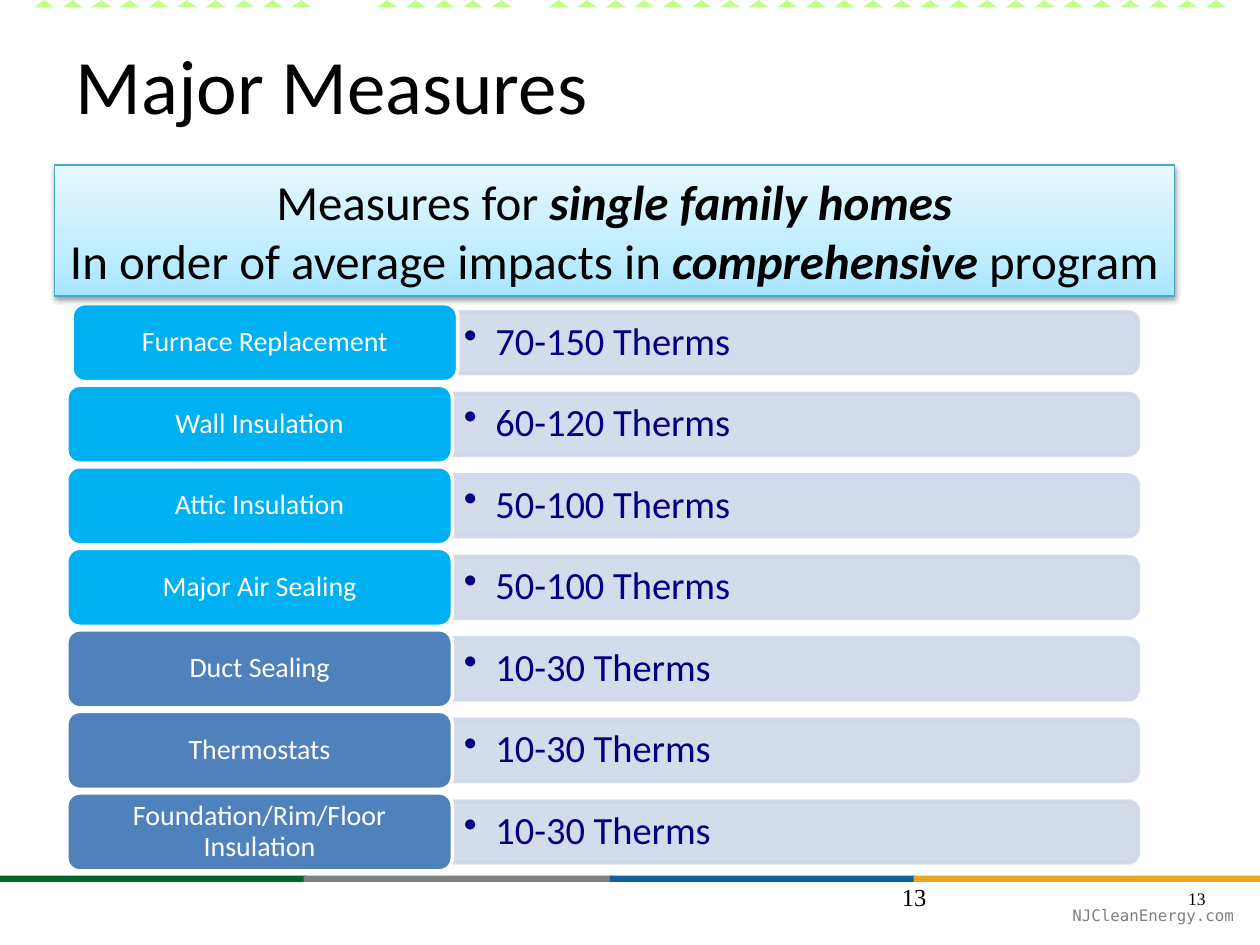
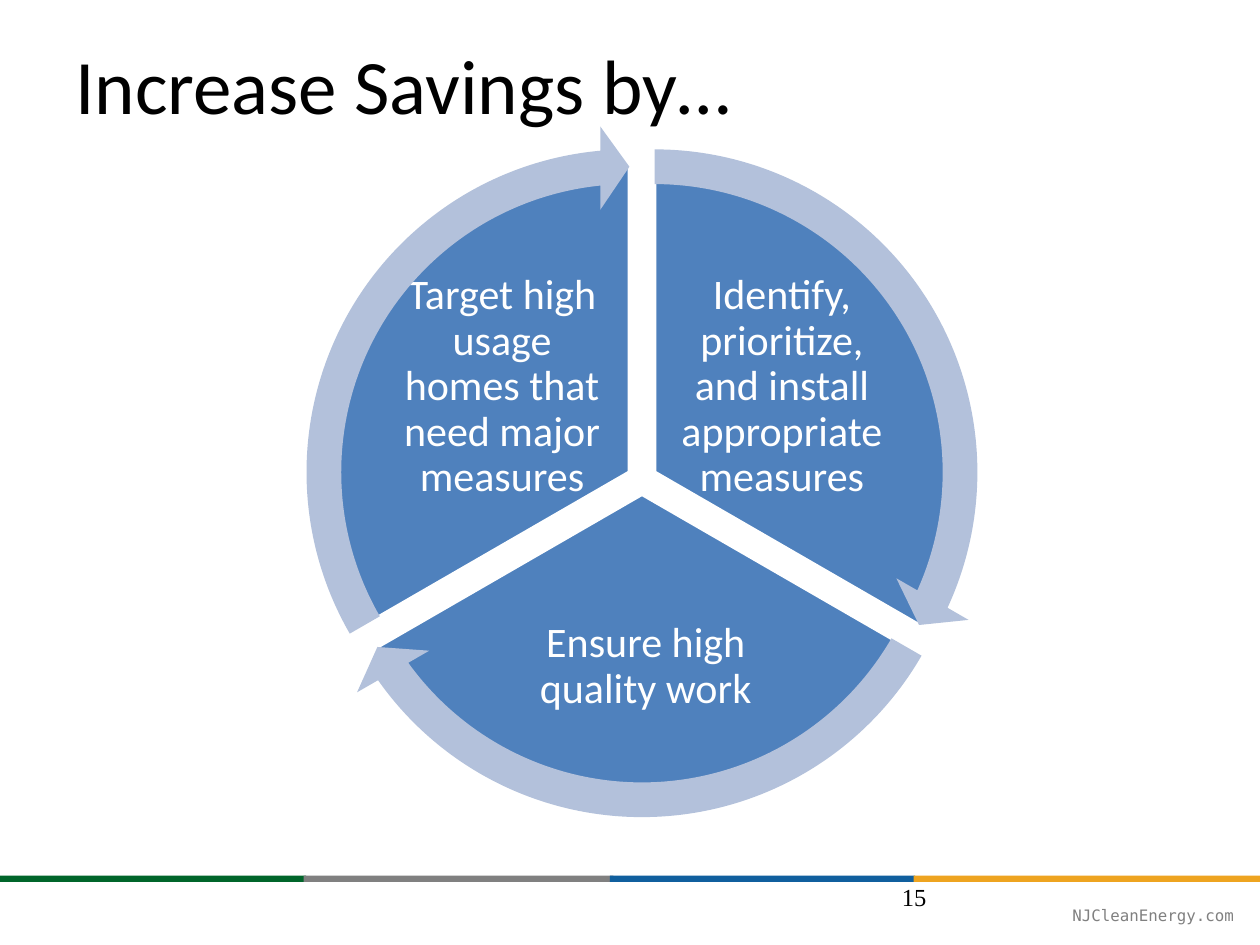
from lxml.etree import SubElement
from pptx import Presentation
from pptx.dml.color import RGBColor
from pptx.enum.shapes import MSO_SHAPE as SHAPE
from pptx.enum.text import MSO_ANCHOR as ANCHOR, PP_ALIGN as ALIGN
from pptx.oxml import parse_xml
from pptx.oxml.ns import nsdecls, qn
from pptx.util import Pt

BLACK, WHITE, GREY, NAVY = "000000", "FFFFFF", "808080", "000081"
SKY, BLUE, PALE, ARROW, TOOTH = "00B0F0", "4F81BD", "D0D8E8", "B3C1DB", "BFFF8C"
BAND = [(0, 175, "00652A"), (173.5, 177, GREY), (348.5, 174.5, "105F9E"), (522, 198, "EEA420")]
BANNER_STOPS = [(0, "A7E6FF"), (35, "C1EDFF"), (100, "E7F8FF")]

TITLE = dict(size=44, name="Calibri", color=BLACK)
BANNER = dict(size=28, name="Calibri", color=BLACK)
LABEL = dict(size=16, name="Calibri", color=WHITE)
VALUE = dict(size=22, name="Calibri", color=NAVY)
WEDGE = dict(size=24, name="Calibri", color=WHITE)
FOOTER = dict(size=9, name="DejaVu Sans Mono", color=GREY)
NUMBER = dict(size=14, name="Times New Roman", color=BLACK)
SMALL_NUMBER = dict(NUMBER, size=10)

MEASURES = [
    ("Furnace Replacement", "70-150 Therms", SKY),
    ("Wall Insulation", "60-120 Therms", SKY),
    ("Attic Insulation", "50-100 Therms", SKY),
    ("Major Air Sealing", "50-100 Therms", SKY),
    ("Duct Sealing", "10-30 Therms", BLUE),
    ("Thermostats", "10-30 Therms", BLUE),
    ("Foundation/Rim/Floor Insulation", "10-30 Therms", BLUE),
]
STEPS = [
    ("Identify, prioritize, and install appropriate measures", 270, (14.4, 0), (222.5, 97.2, 126, 105)),
    ("Ensure high quality work", 30, (7.2, 12.6), (113, 263.5, 189.4, 92.2)),
    ("Target high usage homes that need major measures", 150, (0, 0), (62.6, 97.2, 126, 105)),
]


def rgb(value):
    """Turn a hex string into a colour."""
    return RGBColor.from_string(value)


def set_font(font, fmt):
    """Apply a dict of format values to a font."""
    for key, value in fmt.items():
        if key == "color":
            font.color.rgb = rgb(value)
        else:
            setattr(font, key, Pt(value) if key == "size" else value)


def add_runs(p, runs, fmt):
    """Add (text, format changes) runs to a paragraph."""
    for text, changes in runs:
        r = p.add_run()
        r.text = text
        set_font(r.font, {**fmt, **changes})


def set_frame(tf, inset=(7.2, 3.6), anchor=ANCHOR.TOP):
    """Set wrapping, insets and anchor of a text frame."""
    across, down = (Pt(v) for v in inset)
    values = dict(word_wrap=True, vertical_anchor=anchor, margin_left=across,
                  margin_right=across, margin_top=down, margin_bottom=down)
    for key, value in values.items():
        setattr(tf, key, value)


def write(sp, text, fmt, align=ALIGN.LEFT, spacing=None, **frame):
    """Write one paragraph into a shape and return it."""
    set_frame(sp.text_frame, **frame)
    p = sp.text_frame.paragraphs[0]
    p.alignment, p.line_spacing = align, spacing
    add_runs(p, [(text, {})], fmt)
    return p


def add_text(slide, box, text, fmt, **options):
    """Add a text box with one paragraph."""
    return write(slide.shapes.add_textbox(*map(Pt, box)), text, fmt, **options)


def add_box(slide, kind, box, fill, line=None, width=2, adjust=()):
    """Add a flat preset shape."""
    sp = slide.shapes.add_shape(kind, *map(Pt, box))
    sp.shadow.inherit = False
    sp.fill.solid()
    sp.fill.fore_color.rgb = rgb(fill)
    if line:
        sp.line.color.rgb = rgb(line)
        sp.line.width = Pt(width)
    else:
        sp.line.fill.background()
    for i, value in enumerate(adjust):
        sp.adjustments[i] = value
    return sp


def add_bullet(p, indent):
    """Give a paragraph a hanging round bullet."""
    p.level = 1
    pPr = p._p.get_or_add_pPr()
    pPr.set("marL", str(Pt(indent)))
    pPr.set("indent", str(-Pt(indent)))
    SubElement(pPr, qn("a:buChar"), char="•")


def add_base(prs, title, number):
    """Add a slide with its title, colour band, footer and number."""
    slide = prs.slides.add_slide(prs.slide_layouts[5])
    sp = slide.shapes.title
    sp.left, sp.top, sp.width, sp.height = map(Pt, (36, 18, 620.6, 104.4))
    write(sp, title, TITLE)
    for x, w, fill in BAND:
        add_box(slide, SHAPE.RECTANGLE, (x, 500.4, w, 3.6), fill)
    add_text(slide, (0, 515.5, 704.9, 12.2), "NJCleanEnergy.com", FOOTER,
             align=ALIGN.RIGHT, spacing=1.2, inset=(0, 0))
    add_text(slide, (508.3, 500.4, 162, 28.8), number, NUMBER)
    return slide


def add_teeth(slide, box, count, gaps):
    """Draw a row of small triangles, leaving out the gaps."""
    x, y, w, h = box
    tooth = 11.6
    pitch = (w - tooth) / (count - 1)
    for i in range(count):
        if i not in gaps:
            add_box(slide, SHAPE.ISOSCELES_TRIANGLE, (x + i * pitch, y, tooth, h), TOOTH)


def add_measures(slide, box):
    """Draw one row per measure: a label over a rounded bar with its value."""
    x, y, w, h = box
    label_w, label_h, bar_h = 220.3, 44.6, 35.3
    pitch = (h - label_h) / (len(MEASURES) - 1)
    bar_x, bar_w = x + label_w, w - label_w
    for i, (name, therms, fill) in enumerate(MEASURES):
        top = y + i * pitch
        middle = top + label_h / 2
        bar = add_box(slide, SHAPE.ROUND_2_SAME_RECTANGLE,
                      (bar_x + (bar_w - bar_h) / 2, middle - bar_w / 2, bar_h, bar_w), PALE, PALE)
        bar.rotation = 90
        for color in bar._element.spPr.iter(qn("a:srgbClr")):
            SubElement(color, qn("a:alpha"), val="90000")
        p = add_text(slide, (bar_x, middle - 15.9, bar_w - 1.5, 31.8), therms, VALUE,
                     spacing=0.9, inset=(6.6, 3.3), anchor=ANCHOR.MIDDLE)
        add_bullet(p, 18)
        shift = 0 if i else 3
        label = add_box(slide, SHAPE.ROUNDED_RECTANGLE, (x + shift, top, label_w, label_h), fill, WHITE)
        write(label, name, LABEL, align=ALIGN.CENTER, spacing=0.9, inset=(4.8, 2.4), anchor=ANCHOR.MIDDLE)


def add_banner(slide, box, lines):
    """Draw the shaded banner with its centred lines."""
    sp = add_box(slide, SHAPE.RECTANGLE, box, WHITE, "46AAC5", 0.75)
    spPr = sp._element.spPr
    stops = "".join(f'<a:gs pos="{pos * 1000}"><a:srgbClr val="{color}"/></a:gs>'
                    for pos, color in BANNER_STOPS)
    spPr.replace(spPr.find(qn("a:solidFill")), parse_xml(
        f'<a:gradFill {nsdecls("a")}><a:gsLst>{stops}</a:gsLst><a:lin ang="16200000" scaled="0"/></a:gradFill>'))
    spPr.find(qn("a:effectLst")).append(parse_xml(
        f'<a:outerShdw {nsdecls("a")} blurRad="{Pt(3.1)}" dist="{Pt(1.6)}" dir="5400000" rotWithShape="0">'
        f'<a:srgbClr val="{BLACK}"><a:alpha val="38000"/></a:srgbClr></a:outerShdw>'))
    tf = sp.text_frame
    set_frame(tf)
    for i, runs in enumerate(lines):
        p = tf.add_paragraph() if i else tf.paragraphs[0]
        p.alignment = ALIGN.CENTER
        add_runs(p, runs, BANNER)


def add_wheel(slide, box):
    """Draw three wedges with text, then the arrows that run around them."""
    x, y, w, h = box
    ring = w - 14.4
    inset = 21.9
    pie = ring - 2 * inset
    for text, start, (dx, dy), (tx, ty, tw, th) in STEPS:
        add_box(slide, SHAPE.PIE, (x + dx + inset, y + dy + inset, pie, pie), BLUE, WHITE,
                adjust=(start * 0.6, (start + 120) % 360 * 0.6))
        add_text(slide, (x + tx, y + ty, tw, th), text, WEDGE, align=ALIGN.CENTER,
                 spacing=0.9, inset=(2.4, 2.4), anchor=ANCHOR.MIDDLE)
    for text, start, (dx, dy), area in STEPS:
        end = (start + 120) % 360 - 5.46
        add_box(slide, SHAPE.CIRCULAR_ARROW, (x + dx, y + dy, ring, ring), ARROW,
                adjust=(0.05, 3.28, end * 0.6, start * 0.6, 0.06))


def build_measures(prs):
    """Build the slide that ranks the measures."""
    slide = add_base(prs, "Major Measures", "13")
    add_teeth(slide, (19.4, 0, 681.2, 4.3), 42, (10, 11, 17))
    add_text(slide, (671.8, 504, 30.2, 19.4), "13", SMALL_NUMBER)
    add_measures(slide, (38.2, 173.5, 612.3, 324.2))
    strong = dict(bold=True, italic=True)
    add_banner(slide, (31, 94.3, 640, 74.9), [
        [("Measures for ", {}), ("single family homes", strong)],
        [("In order of average impacts in ", {}), ("comprehensive", strong), (" program", {})],
    ])


def build_savings(prs):
    """Build the slide with the cycle of savings steps."""
    slide = add_base(prs, "Increase Savings by…", "15")
    add_wheel(slide, (161.3, 71.5, 411.1, 409.3))


def main():
    """Build and save the presentation."""
    prs = Presentation()
    prs.slide_width, prs.slide_height = Pt(720), Pt(540)
    build_measures(prs)
    build_savings(prs)
    prs.save("out.pptx")


if __name__ == "__main__":
    main()
